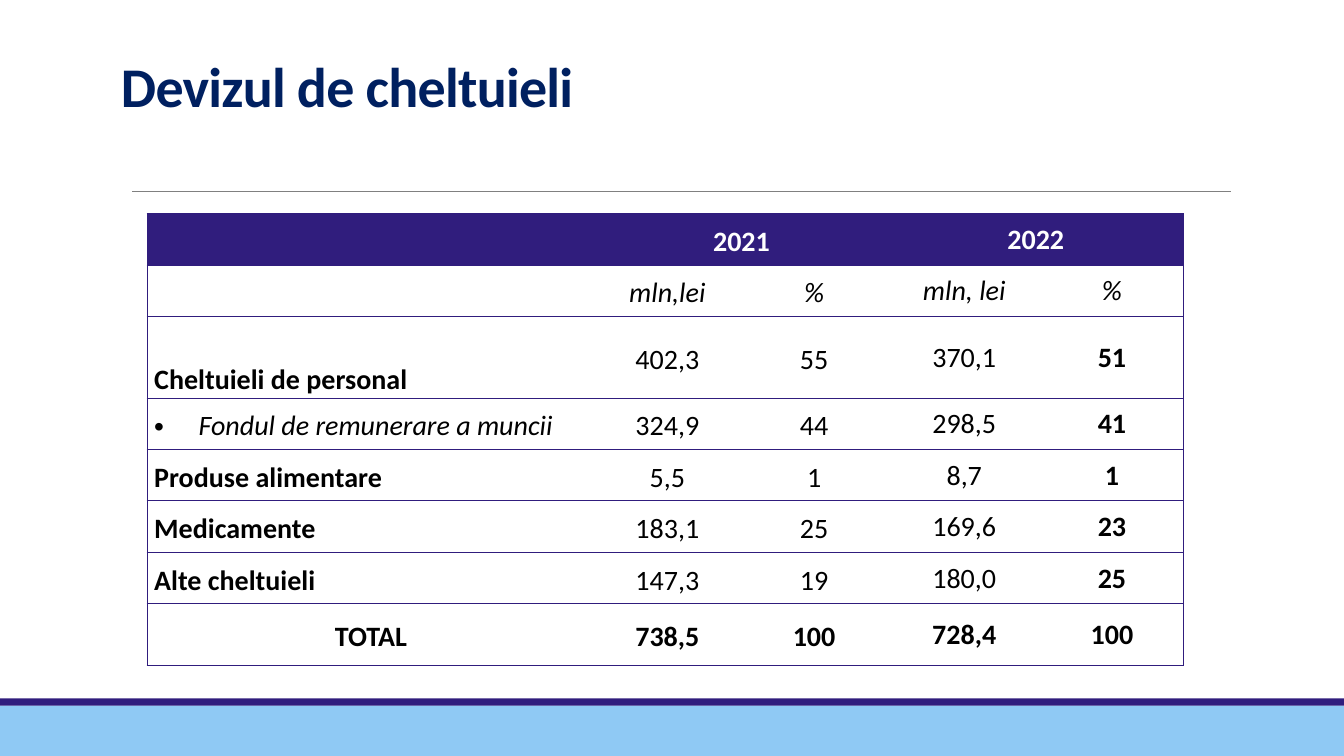
"""Builds the expenditure estimate slide with its 2021 and 2022 table."""
from lxml import etree
from pptx import Presentation
from pptx.dml.color import RGBColor
from pptx.enum.shapes import MSO_CONNECTOR, MSO_SHAPE
from pptx.enum.text import MSO_ANCHOR, MSO_AUTO_SIZE, PP_ALIGN
from pptx.oxml.ns import qn
from pptx.util import Inches, Pt

CENTER, JUSTIFY = PP_ALIGN.CENTER, PP_ALIGN.JUSTIFY
MIDDLE, BOTTOM = MSO_ANCHOR.MIDDLE, MSO_ANCHOR.BOTTOM
RECTANGLE, STRAIGHT = MSO_SHAPE.RECTANGLE, MSO_CONNECTOR.STRAIGHT
NO_AUTOFIT = MSO_AUTO_SIZE.NONE

FONT = "Calibri"
COLORS = {"title": "002060", "purple": "301D7D", "sky": "8FC9F4",
          "rule": "808080", "white": "FFFFFF", "black": "000000"}
TITLE = "Devizul de cheltuieli"
EXPENSES = [
    ("", "2021", "", "2022", ""),
    ("", "mln,lei", "%", "mln, lei", "%"),
    ("Cheltuieli de personal", "402,3", "55", "370,1", "51"),
    ("Fondul de remunerare a muncii", "324,9", "44", "298,5", "41"),
    ("Produse alimentare", "5,5", "1", "8,7", "1"),
    ("Medicamente", "183,1", "25", "169,6", "23"),
    ("Alte cheltuieli", "147,3", "19", "180,0", "25"),
    ("TOTAL", "738,5", "100", "728,4", "100"),
]
YEARS, UNITS, STAFF, WAGES, TOTAL = 0, 1, 2, 3, 7
LAST_COL = 4
COL_WIDTHS = [4.44, 1.44, 1.47, 1.51, 1.42]
ROW_HEIGHTS = [0.51, 0.51, 0.81, 0.51, 0.51, 0.51, 0.51, 0.61]
BANDS = [(7, 0.5, "sky"), (6.93, 0.07, "purple")]


def rgb(name):
    return RGBColor.from_string(COLORS[name])


def style_runs(paragraph, size, color, bold, italic=False):
    for run in paragraph.runs:
        font = run.font
        font.name, font.size = FONT, Pt(size)
        font.bold, font.italic = bold, italic
        font.color.rgb = rgb(color)


def set_borders(cell, visible_sides):
    properties = cell._tc.get_or_add_tcPr()
    for position, side in enumerate("LRTB"):
        line = etree.Element(qn(f"a:ln{side}"), w=str(Pt(1)))
        if side in visible_sides:
            fill = etree.SubElement(line, qn("a:solidFill"))
            etree.SubElement(fill, qn("a:srgbClr"), val=COLORS["purple"])
        else:
            etree.SubElement(line, qn("a:noFill"))
        properties.insert(position, line)


def add_bullet(paragraph, indent):
    properties = paragraph._p.get_or_add_pPr()
    properties.set("marL", str(Inches(indent)))
    properties.set("indent", str(-Inches(indent)))
    etree.SubElement(properties, qn("a:buFont"), typeface="Arial")
    etree.SubElement(properties, qn("a:buChar"), char="•")


def format_cell(cell, row, col, text):
    is_label, is_2022 = col == 0, col >= 3
    side, top = (0.01, 0.01) if is_2022 else (0.07, 0)
    if is_label and row == STAFF:
        top = 0.39
    cell.margin_left = cell.margin_right = Inches(side)
    cell.margin_top, cell.margin_bottom = Inches(top), 0
    cell.vertical_anchor = MIDDLE
    if row == YEARS:
        cell.fill.solid()
        cell.fill.fore_color.rgb = rgb("purple")
    else:
        cell.fill.background()
    set_borders(cell, "TB" + "L" * is_label + "R" * (col == LAST_COL))

    cell.text_frame.text = text
    paragraph = cell.text_frame.paragraphs[0]
    paragraph.alignment = JUSTIFY if is_label and row != TOTAL else CENTER
    paragraph.line_spacing = 1.0 if is_2022 else 1.15
    italic = row == UNITS or (is_label and row == WAGES)
    bold = not italic and (row in (YEARS, TOTAL) or col in (0, LAST_COL))
    style_runs(paragraph, 20, "white" if row == YEARS else "black", bold, italic)
    if is_label and row == WAGES:
        add_bullet(paragraph, 0.44)


def add_bands(slide, width):
    for top, height, color in BANDS:
        band = slide.shapes.add_shape(RECTANGLE, 0, Inches(top), width, Inches(height))
        band.shadow.inherit = False
        band.fill.solid()
        band.fill.fore_color.rgb = rgb(color)
        band.line.fill.background()


def add_rule(slide):
    rule = slide.shapes.add_connector(STRAIGHT, Inches(1.31), Inches(1.9),
                                      Inches(12.21), Inches(1.9))
    rule.line.color.rgb = rgb("rule")
    rule.line.width = Pt(0.5)
    etree.SubElement(rule._element.spPr, qn("a:effectLst"))


def format_title(title):
    title.left, title.top = Inches(1.1), Inches(0.27)
    title.width, title.height = Inches(11), Inches(0.96)
    frame = title.text_frame
    frame.text = TITLE
    frame.word_wrap = True
    frame.auto_size = NO_AUTOFIT
    frame.vertical_anchor = BOTTOM
    paragraph = frame.paragraphs[0]
    paragraph.alignment = PP_ALIGN.LEFT
    paragraph.line_spacing = 0.85
    style_runs(paragraph, 40, "title", True)
    paragraph.runs[0]._r.get_or_add_rPr().set("spc", "-50")


def add_expenses(slide):
    table = slide.shapes.add_table(
        len(ROW_HEIGHTS), len(COL_WIDTHS), Inches(1.46), Inches(2.12),
        Inches(sum(COL_WIDTHS)), Inches(sum(ROW_HEIGHTS))).table
    table.first_row = table.horz_banding = False
    for column, width in zip(table.columns, COL_WIDTHS):
        column.width = Inches(width)
    for table_row, height in zip(table.rows, ROW_HEIGHTS):
        table_row.height = Inches(height)
    for row, values in enumerate(EXPENSES):
        for col, text in enumerate(values):
            format_cell(table.cell(row, col), row, col, text)
    for col in (1, 3):
        table.cell(YEARS, col).merge(table.cell(YEARS, col + 1))


def main():
    deck = Presentation()
    deck.slide_width, deck.slide_height = Inches(13.33), Inches(7.5)
    slide = deck.slides.add_slide(deck.slide_layouts[5])
    add_bands(slide, deck.slide_width)
    add_rule(slide)
    format_title(slide.shapes.title)
    add_expenses(slide)
    deck.save("out.pptx")


if __name__ == "__main__":
    main()
